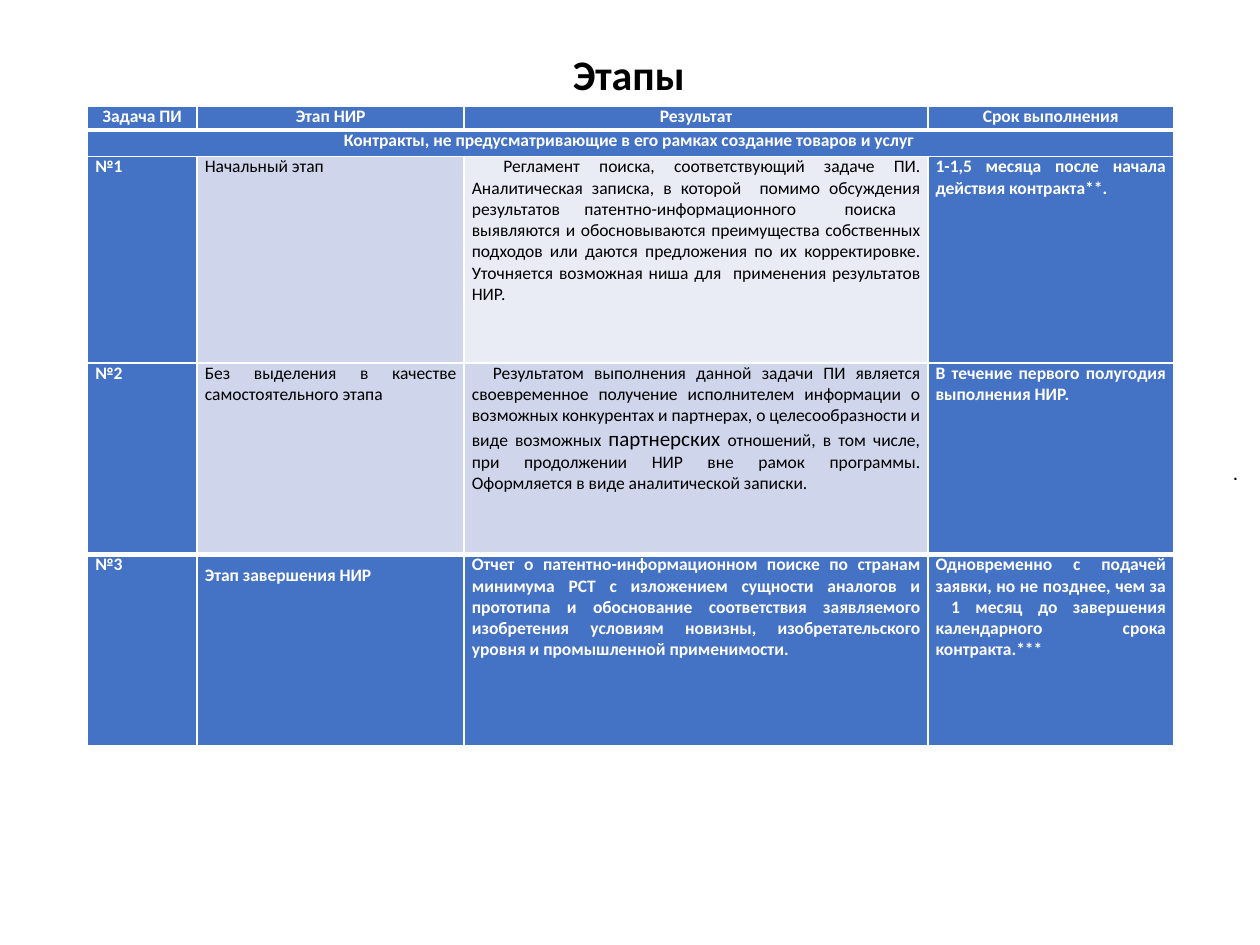
from pptx import Presentation
from pptx.dml.color import RGBColor
from pptx.enum.text import MSO_ANCHOR, MSO_AUTO_SIZE, PP_ALIGN
from pptx.oxml import parse_xml
from pptx.oxml.ns import nsdecls
from pptx.util import Pt

HUES = {"blue": "4472C4", "mid": "CFD5EA", "pale": "E9EBF5",
        "white": "FFFFFF", "black": "000000"}
COLS = [62.6, 152.6, 265, 140.4]
ROWS = [13.7, 15.1, 118, 109.4, 109.4]
HEADS = ["Задача ПИ", "Этап НИР", "Результат", "Срок выполнения"]
BAND = "Контракты, не предусматривающие в его рамках создание товаров и услуг "
TASKS = [
    ["№1", "Начальный этап",
     "Регламент поиска, соответствующий задаче ПИ. Аналитическая записка, "
     "в которой  помимо обсуждения результатов патентно-информационного  "
     "поиска  выявляются и обосновываются преимущества собственных подходов "
     "или даются предложения по их корректировке. Уточняется возможная ниша "
     "для  применения результатов НИР.",
     "1-1,5 месяца после начала действия контракта**."],
    ["№2", "Без выделения в качестве самостоятельного этапа",
     "Результатом выполнения данной задачи ПИ является своевременное "
     "получение исполнителем информации о возможных конкурентах и партнерах, "
     "о целесообразности и виде возможных |партнерских| отношений, в том "
     "числе, при продолжении НИР вне рамок программы. Оформляется в виде "
     "аналитической записки.",
     "В течение первого полугодия выполнения НИР."],
    ["№3", "Этап завершения НИР",
     "Отчет о патентно-информационном поиске по странам минимума РСТ с "
     "изложением сущности аналогов и прототипа и обоснование соответствия "
     "заявляемого изобретения условиям новизны, изобретательского уровня и "
     "промышленной применимости. ",
     "Одновременно с подачей заявки, но не позднее, чем за  1 месяц до "
     "завершения календарного срока контракта.***"],
]
FILLS = {(2, 1): "mid", (2, 2): "pale", (3, 1): "mid", (3, 2): "mid"}
DENTS = {(2, 2): 18, (3, 2): 12}


def style(run, size, hue, bold=False, face="Calibri"):
    """Set the font of a run."""
    run.font.name, run.font.size, run.font.bold = face, Pt(size), bold
    run.font.color.rgb = RGBColor.from_string(HUES[hue])


def indent(para, dent):
    """Indent the first line of a paragraph and drop its bullet."""
    props = para._p.get_or_add_pPr()
    props.set("marL", "0")
    props.set("indent", str(Pt(dent)))
    props.append(parse_xml(f'<a:buNone {nsdecls("a")}/>'))


def place(shape, box):
    """Move a shape to a box of left, top, width and height."""
    shape.left, shape.top, shape.width, shape.height = map(Pt, box)


def edge(cell, top, base):
    """Draw white borders around a cell."""
    props = cell._tc.get_or_add_tcPr()
    for spot, (side, wide) in enumerate(zip("LRTB", (1, 1, top, base))):
        props.insert(spot, parse_xml(
            f'<a:ln{side} {nsdecls("a")} w="{Pt(wide)}"><a:solidFill>'
            f'<a:srgbClr val="{HUES["white"]}"/></a:solidFill></a:ln{side}>'))


def fill_cell(cell, text, row, col):
    """Write and format one table cell."""
    hue = FILLS.get((row, col), "blue")
    cell.fill.solid()
    cell.fill.fore_color.rgb = RGBColor.from_string(HUES[hue])
    edge(cell, 3 if row in (1, 4) else 1, 3 if row in (0, 3) else 1)
    cell.margin_left = cell.margin_right = Pt(4.5)
    cell.margin_top = cell.margin_bottom = 0
    para = cell.text_frame.paragraphs[0]
    para.alignment = PP_ALIGN.CENTER if row < 2 else PP_ALIGN.JUSTIFY
    para.space_after = Pt(6)
    if (row, col) == (4, 1):
        para.line_spacing = 1.5
    if (row, col) in DENTS:
        indent(para, DENTS[row, col])
    for turn, part in enumerate(text.split("|")):
        run = para.add_run()
        run.text = part
        style(run, 12 if turn % 2 else 10,
              "white" if hue == "blue" else "black", hue == "blue")


def add_title(slide, box):
    """Place the heading in its box."""
    title = slide.shapes.title
    place(title, box)
    frame = title.text_frame
    frame.text = "Этапы"
    frame.vertical_anchor = MSO_ANCHOR.BOTTOM
    para = frame.paragraphs[0]
    para.alignment, para.line_spacing = PP_ALIGN.CENTER, 0.9
    style(para.runs[0], 24, "black", True)


def add_stages(slide, box):
    """Place the table of stages in its box."""
    table = slide.shapes.add_table(len(ROWS), len(COLS), *map(Pt, box)).table
    for col, wide in zip(table.columns, COLS):
        col.width = Pt(wide)
    for row, high in zip(table.rows, ROWS):
        row.height = Pt(high)
    table.cell(1, 0).merge(table.cell(1, 3))
    for row, texts in enumerate([HEADS, [BAND, "", "", ""], *TASKS]):
        for col, text in enumerate(texts):
            fill_cell(table.cell(row, col), text, row, col)


def add_mark(slide, box):
    """Place the lone full stop at the right edge."""
    mark = slide.placeholders[1]
    place(mark, box)
    frame = mark.text_frame
    frame.text = "."
    frame.word_wrap = False
    frame.auto_size = MSO_AUTO_SIZE.SHAPE_TO_FIT_TEXT
    frame.vertical_anchor = MSO_ANCHOR.MIDDLE
    para = frame.paragraphs[0]
    para.alignment = PP_ALIGN.RIGHT
    para.space_before = Pt(0)
    indent(para, 18)
    style(para.runs[0], 12, "black", face="Arial")


def main():
    """Build the slide and save it."""
    deck = Presentation()
    deck.slide_width, deck.slide_height = Pt(720), Pt(540)
    slide = deck.slides.add_slide(deck.slide_layouts[1])
    add_title(slide, (49, 26, 620.6, 34.6))
    add_stages(slide, (50, 60.6, sum(COLS), sum(ROWS)))
    add_mark(slide, (685.4, 259.2, 11.5, 21.6))
    deck.save("out.pptx")


if __name__ == "__main__":
    main()
